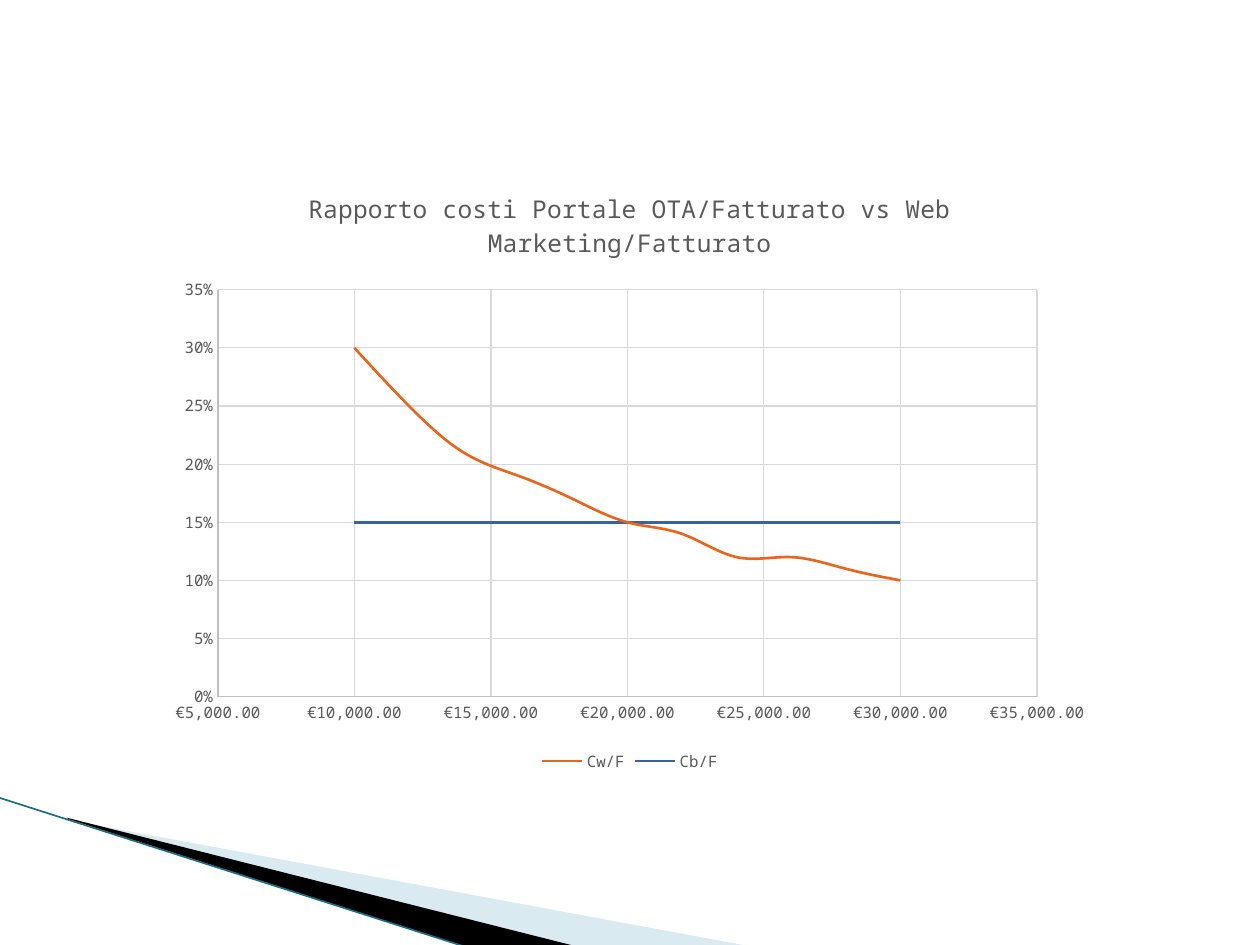
"""Build a slide comparing portal and web marketing costs against turnover."""
import pptx
import pptx.chart.data
import pptx.dml.color
import pptx.enum.chart
import pptx.enum.shapes
import pptx.oxml
import pptx.oxml.ns
import pptx.util
from pptx.util import Inches

COLORS = {
    "pale": "A0CBDC", "black": "000000", "teal": "1B6E84", "text": "595959",
    "axis": "BFBFBF", "grid": "D9D9D9", "web": "EB641B", "portal": "39639D",
}
A_NS = 'xmlns:a="http://schemas.openxmlformats.org/drawingml/2006/main"'
C_NS = 'xmlns:c="http://schemas.openxmlformats.org/drawingml/2006/chart"'


class SlideBuilder:
    """Hold the style and the current slide."""

    font_name = "Noto Sans Mono"

    def __init__(self, prs):
        self.slide = prs.slides.add_slide(prs.slide_layouts[6])

    def rgb(self, name):
        return pptx.dml.color.RGBColor.from_string(COLORS[name])

    def style_font(self, font, size):
        font.name = self.font_name
        font.size = pptx.util.Pt(size)
        font.bold = False
        font.color.rgb = self.rgb("text")

    def style_line(self, line, color, width):
        line.color.rgb = self.rgb(color)
        line.width = pptx.util.Pt(width)

    def wedge(self, points, color, opacity=100):
        start, *rest = [(Inches(x), Inches(y)) for x, y in points]
        builder = self.slide.shapes.build_freeform(*start)
        builder.add_line_segments(rest, close=True)
        sp = builder.convert_to_shape()
        sp.shadow.inherit = False
        sp.line.fill.background()
        sp.fill.solid()
        sp.fill.fore_color.rgb = self.rgb(color)
        if opacity < 100:
            clr = sp._element.spPr.find(pptx.oxml.ns.qn("a:solidFill"))[0]
            clr.append(pptx.oxml.parse_xml(f'<a:alpha {A_NS} val="{opacity * 1000}"/>'))

    def line(self, begin, end, color, width):
        ends = [Inches(v) for v in (*begin, *end)]
        cxn = self.slide.shapes.add_connector(pptx.enum.shapes.MSO_CONNECTOR.STRAIGHT, *ends)
        self.style_line(cxn.line, color, width)
        cxn._element.spPr.append(pptx.oxml.parse_xml(f"<a:effectLst {A_NS}/>"))

    def axis(self, axis, low, high, step, number_format):
        axis.minimum_scale, axis.maximum_scale, axis.major_unit = low, high, step
        axis.major_tick_mark = axis.minor_tick_mark = pptx.enum.chart.XL_TICK_MARK.NONE
        axis.has_major_gridlines = True
        self.style_line(axis.major_gridlines.format.line, "grid", 0.75)
        self.style_line(axis.format.line, "axis", 0.75)
        self.style_font(axis.tick_labels.font, 9)
        axis.tick_labels.number_format = number_format
        axis.tick_labels.number_format_is_linked = False

    def place_plot(self, chart, box, plot_box):
        left, top, width, height = box
        x, y, w, h = plot_box
        shares = {"x": (x - left) / width, "y": (y - top) / height,
                  "w": w / width, "h": h / height}
        sizes = "".join(f'<c:{k} val="{v:.4f}"/>' for k, v in shares.items())
        area = chart._chartSpace.chart.plotArea
        for old in area.findall(pptx.oxml.ns.qn("c:layout")):
            area.remove(old)
        area.insert(0, pptx.oxml.parse_xml(
            f'<c:layout {C_NS}><c:manualLayout><c:layoutTarget val="inner"/>'
            f'<c:xMode val="edge"/><c:yMode val="edge"/>{sizes}</c:manualLayout></c:layout>'))

    def smooth(self, plotted):
        ser = plotted._element
        for old in ser.findall(pptx.oxml.ns.qn("c:smooth")):
            ser.remove(old)
        ser.append(pptx.oxml.parse_xml(f'<c:smooth {C_NS} val="1"/>'))

    def scatter(self, box, plot_box, title, series):
        data = pptx.chart.data.XyChartData()
        for name, _, points in series:
            plotted = data.add_series(name)
            for x, y in points:
                plotted.add_data_point(x, y)
        kind = pptx.enum.chart.XL_CHART_TYPE.XY_SCATTER_SMOOTH_NO_MARKERS
        chart = self.slide.shapes.add_chart(kind, *[Inches(v) for v in box], data).chart
        self.style_font(chart.font, 10)
        chart.has_title = True
        p = chart.chart_title.text_frame.paragraphs[0]
        p.text = title
        self.style_font(p.font, 14)
        chart.chart_title.include_in_layout = False
        chart.has_legend = True
        chart.legend.position = pptx.enum.chart.XL_LEGEND_POSITION.BOTTOM
        chart.legend.include_in_layout = False
        self.style_font(chart.legend.font, 9)
        chart.plots[0].vary_by_categories = False
        for plotted, (_, color, _) in zip(chart.plots[0].series, series):
            plotted.marker.style = pptx.enum.chart.XL_MARKER_STYLE.NONE
            self.style_line(plotted.format.line, color, 1.5)
            self.smooth(plotted)
        self.axis(chart.category_axis, 5000, 35000, 5000, "€#,##0.00")
        self.axis(chart.value_axis, 0, 0.35, 0.05, "0%")
        self.place_plot(chart, box, plot_box)


def main():
    prs = pptx.Presentation()
    prs.slide_width, prs.slide_height = Inches(10), Inches(7.5)
    s = SlideBuilder(prs)
    s.wedge([(0.55, 6.51), (5.95, 7.51), (4.56, 7.51), (0.55, 6.5)], "pale", 40)
    s.wedge([(0.53, 6.49), (4.57, 7.51), (3.72, 7.52), (0.54, 6.5)], "black")
    s.line((-0.01, 6.33), (3.71, 7.52), "teal", 0.95)
    turnover = range(10000, 30001, 2000)
    s.scatter(
        (1.16, 1.32, 7.68, 4.85),
        (1.73, 2.3, 6.5, 3.23),
        "Rapporto costi Portale OTA/Fatturato vs Web Marketing/Fatturato",
        [("Cw/F", "web", [(x, round(3000 / x, 2)) for x in turnover]),
         ("Cb/F", "portal", [(x, 0.15) for x in turnover])],
    )
    prs.save("out.pptx")


if __name__ == "__main__":
    main()
